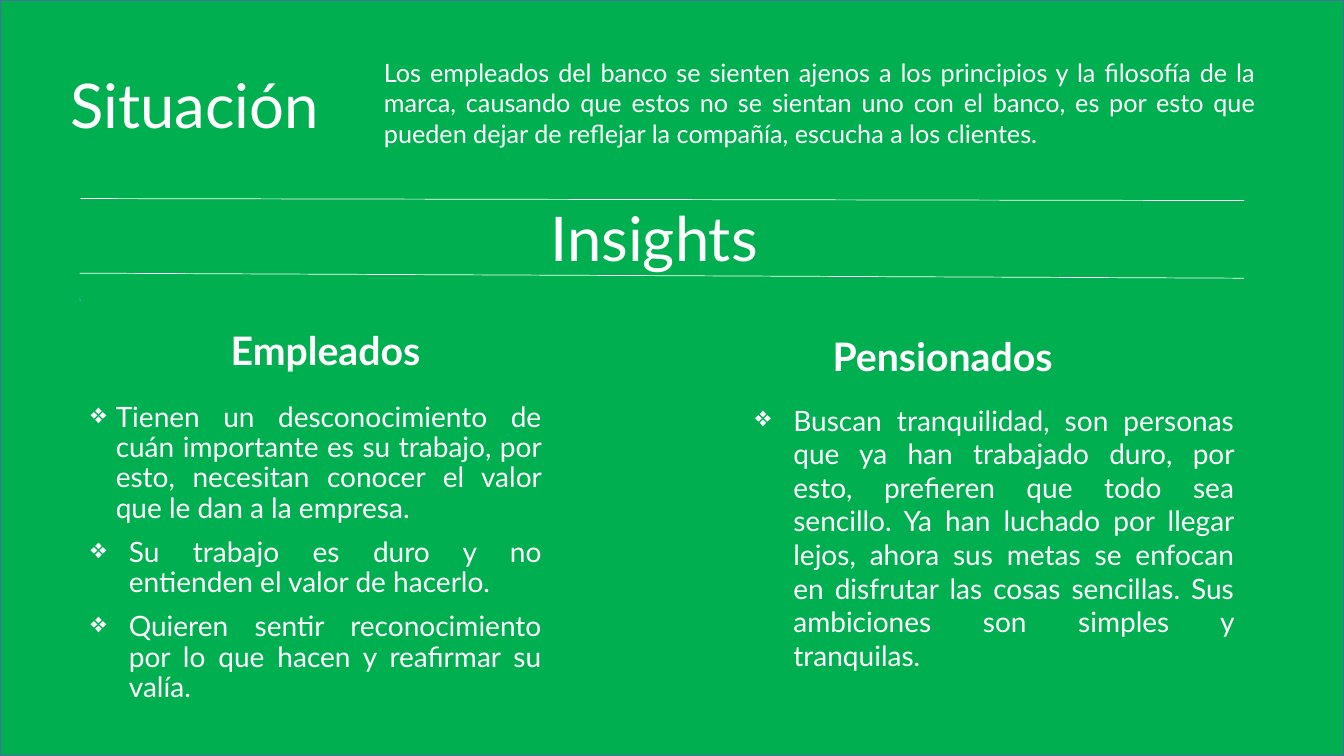
from dataclasses import dataclass

from lxml import etree
from pptx import Presentation
from pptx.dml.color import RGBColor
from pptx.enum import shapes, text
from pptx.oxml import ns
from pptx.util import Inches, Pt

GREEN = RGBColor(0x00, 0xB0, 0x50)
BORDER = RGBColor(0x43, 0x73, 0x9E)
BLUE = RGBColor(0x5B, 0x9B, 0xD5)
WHITE = RGBColor(0xFF, 0xFF, 0xFF)
FONT = "Lato"
BULLET = "❖"


@dataclass
class Block:
    box: tuple[float, float, float, float]
    paragraphs: list[str]
    size: int
    bold: bool = False
    justified: bool = False
    indents: tuple[float, ...] = ()
    line_spacing: float = 1.0
    space_before: int = 0
    anchor: text.MSO_ANCHOR = text.MSO_ANCHOR.TOP


@dataclass
class Rule:
    start: tuple[float, float]
    end: tuple[float, float]
    color: RGBColor = WHITE


BLOCKS = [
    Block((0.6, 0.35, 2.81, 1.45), ["Situación"], 44, line_spacing=0.9,
          anchor=text.MSO_ANCHOR.MIDDLE),
    Block((0.8, 3.95, 4.67, 4.32), [
        "Tienen un desconocimiento de cuán importante es su trabajo, por esto, "
        "necesitan conocer el valor que le dan a la empresa.",
        "Su trabajo es duro y no entienden el valor de hacerlo.",
        "Quieren sentir reconocimiento por lo que hacen y reafirmar su valía.",
    ], 20, justified=True, indents=(0.25, 0.38, 0.38), line_spacing=0.9, space_before=10),
    Block((5.36, 1.93, 3.09, 0.84), ["Insights"], 44),
    Block((8.16, 3.25, 3.41, 0.57), ["Pensionados"], 28, bold=True),
    Block((2.19, 3.19, 3.56, 0.57), ["Empleados"], 28, bold=True),
    Block((7.39, 3.95, 4.95, 3.13), [
        "Buscan tranquilidad, son personas que ya han trabajado duro, por esto, "
        "prefieren que todo sea sencillo. Ya han luchado por llegar lejos, ahora sus "
        "metas se enfocan en disfrutar las cosas sencillas. Sus ambiciones son "
        "simples y tranquilas.",
    ], 20, justified=True, indents=(0.38,)),
    Block((3.71, 0.52, 8.84, 1.31), [
        "Los empleados del banco se sienten ajenos a los principios y la filosofía de "
        "la marca, causando que estos no se sientan uno con el banco, es por esto que "
        "pueden dejar de reflejar la compañía, escucha a los clientes.",
    ], 18, justified=True),
]

RULES = [
    Rule((0.8, 1.97), (12.34, 1.99)),
    Rule((0.8, 2.99), (0.79, 2.96), BLUE),
    Rule((0.79, 2.71), (12.34, 2.76)),
]


def add_background(s, width: int, height: int) -> None:
    sp = s.shapes.add_shape(shapes.MSO_SHAPE.RECTANGLE, 0, 0, width, height)
    sp.shadow.inherit = False
    sp.fill.solid()
    sp.fill.fore_color.rgb = GREEN
    sp.line.color.rgb = BORDER
    sp.line.width = Pt(1)


def set_bullet(p, indent: float) -> None:
    pPr = p._p.get_or_add_pPr()
    pPr.set("marL", str(Inches(indent)))
    pPr.set("indent", str(-Inches(indent)))
    etree.SubElement(pPr, ns.qn("a:buChar"), char=BULLET)


def add_block(s, block: Block) -> None:
    tf = s.shapes.add_textbox(*map(Inches, block.box)).text_frame
    tf.word_wrap = True
    tf.vertical_anchor = block.anchor
    tf.text = "\n".join(block.paragraphs)
    for p in tf.paragraphs:
        p.alignment = text.PP_ALIGN.JUSTIFY if block.justified else text.PP_ALIGN.LEFT
        p.line_spacing = block.line_spacing
        p.space_before = Pt(block.space_before)
        for r in p.runs:
            r.font.name = FONT
            r.font.size = Pt(block.size)
            r.font.bold = block.bold
            r.font.color.rgb = WHITE
    for p, indent in zip(tf.paragraphs, block.indents):
        set_bullet(p, indent)


def add_rule(s, rule: Rule) -> None:
    line = s.shapes.add_connector(shapes.MSO_CONNECTOR.STRAIGHT,
                                  *map(Inches, rule.start + rule.end))
    line.line.color.rgb = rule.color
    line.line.width = Pt(0.5)
    etree.SubElement(line._element.spPr, ns.qn("a:effectLst"))


def main() -> None:
    prs = Presentation()
    prs.slide_width = Inches(13.33)
    prs.slide_height = Inches(7.5)
    s = prs.slides.add_slide(prs.slide_layouts[6])
    add_background(s, prs.slide_width, prs.slide_height)
    for block in BLOCKS:
        add_block(s, block)
    for rule in RULES:
        add_rule(s, rule)
    prs.save("out.pptx")


if __name__ == "__main__":
    main()
